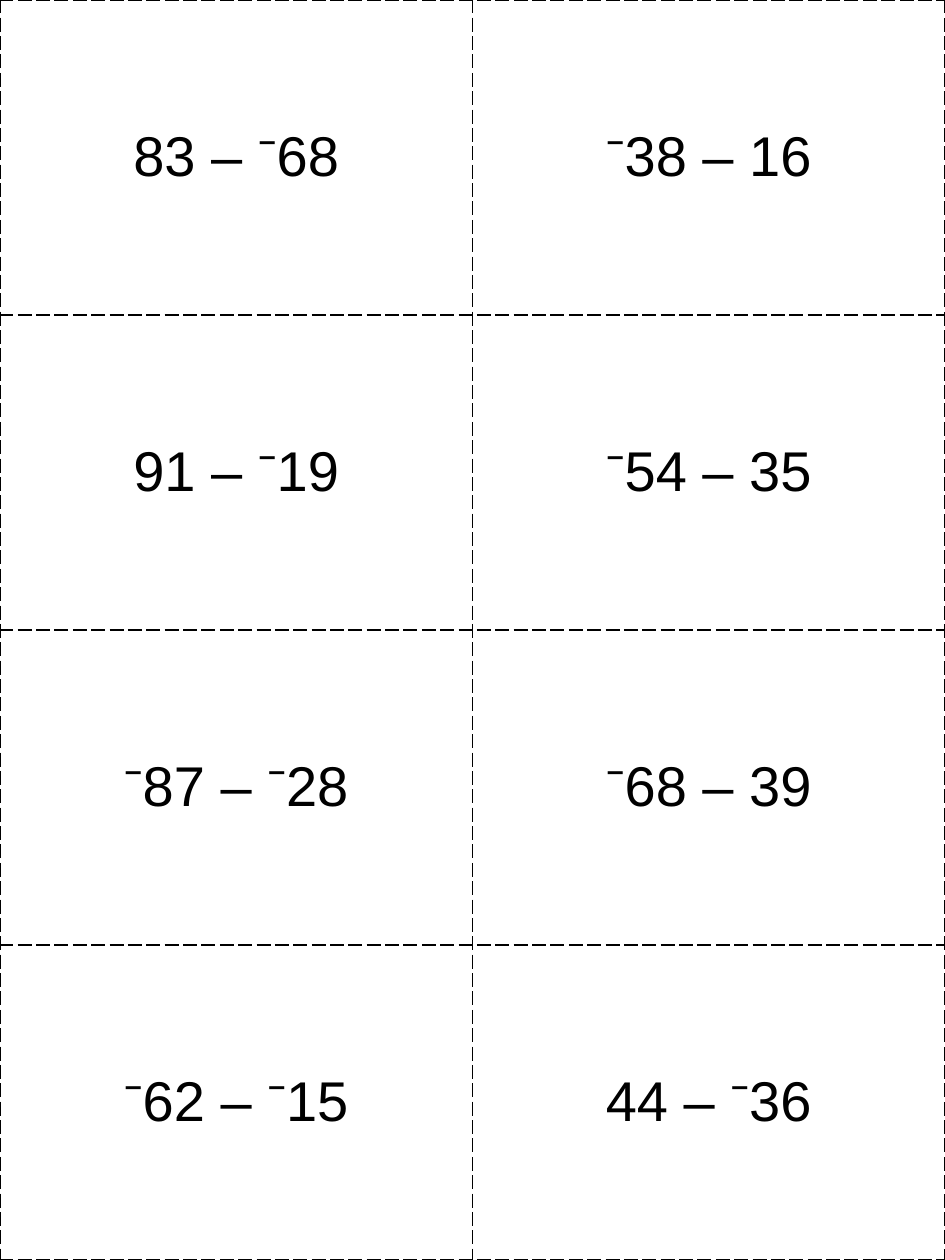
from lxml.etree import SubElement
from pptx import Presentation
from pptx.dml.color import RGBColor
from pptx.enum.text import MSO_ANCHOR, PP_ALIGN
from pptx.oxml.ns import qn
from pptx.util import Pt

PROBLEMS = [
    ("83 – ⁻68", "⁻38 – 16"),
    ("91 – ⁻19", "⁻54 – 35"),
    ("⁻87 – ⁻28", "⁻68 – 39"),
    ("⁻62 – ⁻15", "44 – ⁻36"),
]
BLACK = RGBColor(0, 0, 0)
SHEET_WIDTH, SHEET_HEIGHT = 945, 1260
PX = 914400 / 126


def px(length):
    return round(length * PX)


def add_cut_lines(card):
    properties = card._tc.get_or_add_tcPr()
    for side in ("a:lnL", "a:lnR", "a:lnT", "a:lnB"):
        border = SubElement(properties, qn(side), w=str(Pt(1)))
        ink = SubElement(border, qn("a:solidFill"))
        SubElement(ink, qn("a:srgbClr"), val=str(BLACK))
        SubElement(border, qn("a:prstDash"), val="lgDash")


def fill_card(card, problem):
    add_cut_lines(card)
    card.fill.background()
    card.vertical_anchor = MSO_ANCHOR.MIDDLE
    line = card.text_frame.paragraphs[0]
    line.alignment = PP_ALIGN.CENTER
    run = line.add_run()
    run.text = problem
    run.font.name = "Arial"
    run.font.size = Pt(32)
    run.font.bold = False
    run.font.color.rgb = BLACK


def main():
    deck = Presentation()
    deck.slide_width, deck.slide_height = px(SHEET_WIDTH), px(SHEET_HEIGHT)
    sheet = deck.slides.add_slide(deck.slide_layouts[6])
    cards = sheet.shapes.add_table(
        len(PROBLEMS), len(PROBLEMS[0]), 0, 0, deck.slide_width, deck.slide_height
    ).table
    cards.first_row = cards.horz_banding = False
    for row, pair in enumerate(PROBLEMS):
        for column, problem in enumerate(pair):
            fill_card(cards.cell(row, column), problem)
    deck.save("out.pptx")


if __name__ == "__main__":
    main()
